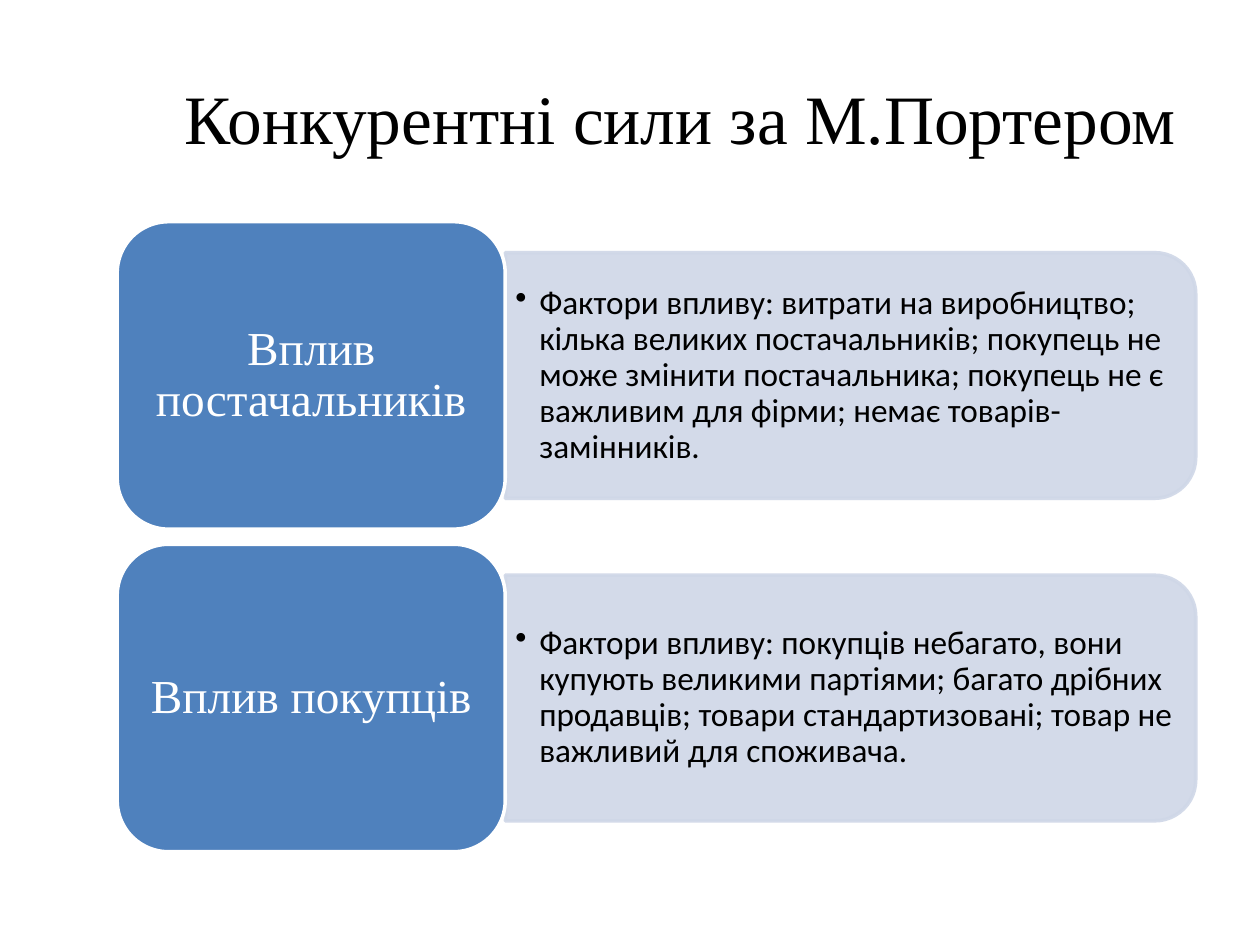
from dataclasses import dataclass

from lxml.etree import SubElement
from pptx import Presentation
from pptx.dml.color import RGBColor
from pptx.enum.shapes import MSO_SHAPE as Shape
from pptx.enum.text import MSO_ANCHOR as Anchor, PP_ALIGN as Align
from pptx.oxml.ns import qn
from pptx.util import Inches, Pt


@dataclass(frozen=True)
class Theme:
    black: str = "000000"
    white: str = "FFFFFF"
    label_fill: str = "4F81BD"
    panel_fill: str = "CFD7E7"
    panel_opacity: int = 90
    outline: float = 2
    heading_font: str = "Times New Roman"
    body_font: str = "Calibri"
    title_size: float = 39.6
    label_size: float = 27
    body_size: float = 19


FORCES = [
    ("Вплив постачальників",
     "Фактори впливу: витрати на виробництво; кілька великих постачальників; "
     "покупець не може змінити постачальника; покупець не є важливим для фірми; "
     "немає товарів-замінників."),
    ("Вплив покупців",
     "Фактори впливу: покупців небагато, вони купують великими партіями; "
     "багато дрібних продавців; товари стандартизовані; "
     "товар не важливий для споживача."),
]

LEFT, TOP = 0.93, 1.76
LABEL_WIDTH, LABEL_HEIGHT = 3.08, 2.44
PANEL_WIDTH, PANEL_HEIGHT = 5.48, 1.95
DETAIL_WIDTH, DETAIL_HEIGHT = 5.38, 1.76
ROW_STEP = 2.56
CORNER = 0.167


class SlideBuilder:
    def __init__(self, slide, theme):
        self.slide = slide
        self.theme = theme

    def set_text(self, shape, text, font, size, color, margins, align, spacing=None):
        frame = shape.text_frame
        frame.text = text
        frame.word_wrap = True
        frame.vertical_anchor = Anchor.MIDDLE
        frame.margin_left = frame.margin_right = Inches(margins[0])
        frame.margin_top = frame.margin_bottom = Inches(margins[1])
        paragraph = frame.paragraphs[0]
        paragraph.alignment = align
        paragraph.line_spacing = spacing
        for run in paragraph.runs:
            run.font.name = font
            run.font.size = Pt(size)
            run.font.color.rgb = RGBColor.from_string(color)
        return paragraph

    def text_box(self, left, top, width, height):
        return self.slide.shapes.add_textbox(
            Inches(left), Inches(top), Inches(width), Inches(height))

    def block(self, kind, left, top, width, height, fill, line):
        shape = self.slide.shapes.add_shape(
            kind, Inches(left), Inches(top), Inches(width), Inches(height))
        shape.shadow.inherit = False
        shape.adjustments[0] = CORNER
        shape.fill.solid()
        shape.fill.fore_color.rgb = RGBColor.from_string(fill)
        shape.line.color.rgb = RGBColor.from_string(line)
        shape.line.width = Pt(self.theme.outline)
        return shape

    def title(self, text):
        theme = self.theme
        self.set_text(self.text_box(1.3, 0.3, 8.2, 1.25), text, theme.heading_font,
                      theme.title_size, theme.black, (0.1, 0.05), Align.CENTER)

    def panel(self, left, middle):
        """Draw a pale panel, turned so that its round corners face right."""
        theme = self.theme
        shape = self.block(
            Shape.ROUND_2_SAME_RECTANGLE,
            left + (PANEL_WIDTH - PANEL_HEIGHT) / 2, middle - PANEL_WIDTH / 2,
            PANEL_HEIGHT, PANEL_WIDTH, theme.panel_fill, theme.panel_fill)
        shape.rotation = 90
        for color in shape._element.spPr.iter(qn("a:srgbClr")):
            SubElement(color, qn("a:alpha"), val=str(theme.panel_opacity * 1000))

    def detail(self, left, middle, text):
        theme = self.theme
        box = self.text_box(left, middle - DETAIL_HEIGHT / 2,
                            DETAIL_WIDTH, DETAIL_HEIGHT)
        paragraph = self.set_text(box, text, theme.body_font, theme.body_size,
                                  theme.black, (0.08, 0.04), Align.LEFT, 0.9)
        properties = paragraph._p.get_or_add_pPr()
        indent = Inches(0.19)
        properties.set("marL", str(indent))
        properties.set("indent", str(-indent))
        bullet_color = SubElement(properties, qn("a:buClr"))
        SubElement(bullet_color, qn("a:srgbClr"), val=theme.black)
        SubElement(properties, qn("a:buChar"), char="•")

    def label(self, left, top, text):
        theme = self.theme
        shape = self.block(Shape.ROUNDED_RECTANGLE, left, top, LABEL_WIDTH,
                           LABEL_HEIGHT, theme.label_fill, theme.white)
        self.set_text(shape, text, theme.heading_font, theme.label_size,
                      theme.white, (0.11, 0.06), Align.CENTER, 0.9)


def main():
    presentation = Presentation()
    presentation.slide_width = Inches(10)
    presentation.slide_height = Inches(7.5)
    slide = presentation.slides.add_slide(presentation.slide_layouts[6])
    builder = SlideBuilder(slide, Theme())

    builder.title("Конкурентні сили за М.Портером")
    panel_left = LEFT + LABEL_WIDTH
    for row, (name, factors) in enumerate(FORCES):
        top = TOP + row * ROW_STEP
        middle = top + LABEL_HEIGHT / 2
        builder.panel(panel_left, middle)
        builder.detail(panel_left, middle, factors)
        builder.label(LEFT, top, name)

    presentation.save("out.pptx")


if __name__ == "__main__":
    main()
